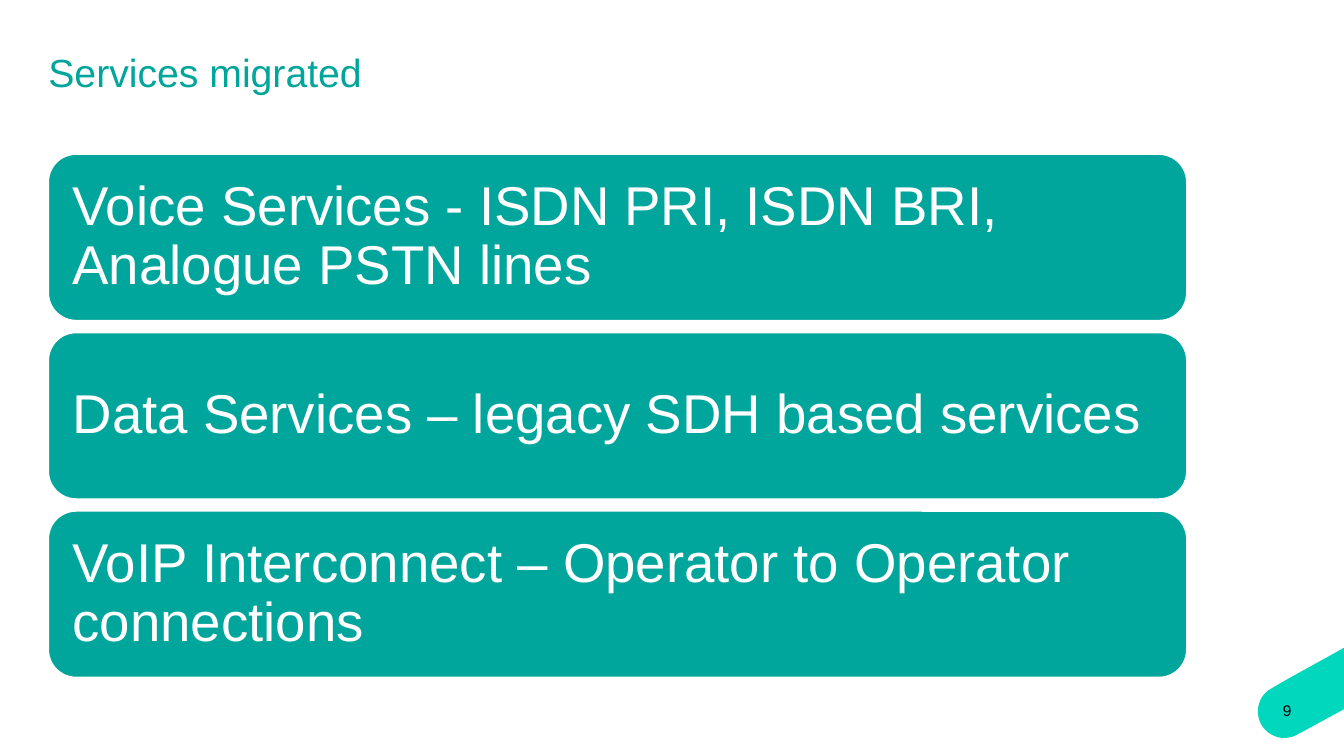
from dataclasses import dataclass

from pptx import Presentation
from pptx.dml.color import RGBColor
from pptx.enum.shapes import MSO_SHAPE
from pptx.enum.text import MSO_ANCHOR, PP_ALIGN
from pptx.util import Inches, Pt

ROUND_RECT = MSO_SHAPE.ROUNDED_RECTANGLE
TOP, MIDDLE = MSO_ANCHOR.TOP, MSO_ANCHOR.MIDDLE
LEFT, RIGHT = PP_ALIGN.LEFT, PP_ALIGN.RIGHT
TITLE_ONLY = 5
CURVE_STEPS = 12


@dataclass(frozen=True)
class Theme:
    font: str = "Arial"
    teal: RGBColor = RGBColor(0x00, 0xA5, 0x9B)
    mint: RGBColor = RGBColor(0x00, 0xD7, 0xBD)
    white: RGBColor = RGBColor(0xFF, 0xFF, 0xFF)
    black: RGBColor = RGBColor(0x00, 0x00, 0x00)
    title_size: Pt = Pt(28)
    card_size: Pt = Pt(39)
    number_size: Pt = Pt(11)


THEME = Theme()
MARGIN = 0.48
CARD_TOP, CARD_STEP = 1.53, 1.77
CARD_WIDTH, CARD_HEIGHT = 11.29, 1.65
SERVICES = [
    "Voice Services - ISDN PRI, ISDN BRI, Analogue PSTN lines",
    "Data Services – legacy SDH based services",
    "VoIP Interconnect – Operator to Operator connections",
]

# Each corner segment holds two control points and an end point, or an end point.
CORNER_START = (12.51, 7.19)
CORNER_SEGMENTS = [
    [(12.59, 7.32), (12.75, 7.36), (12.88, 7.28)],
    [(13.34, 7.03)],
    [(13.34, 6.42)],
    [(13.15, 6.53), (12.81, 6.71), (12.61, 6.83)],
    [(12.48, 6.90), (12.44, 7.06), CORNER_START],
]


def write_text(shape, text, size, color, anchor=TOP, align=LEFT, inset=0.0):
    """Fill a shape with one formatted paragraph and return that paragraph."""
    tf = shape.text_frame
    tf.word_wrap = True
    tf.vertical_anchor = anchor
    tf.margin_left = tf.margin_right = Inches(inset)
    tf.margin_top = tf.margin_bottom = Inches(inset)
    p = tf.paragraphs[0]
    p.alignment = align
    r = p.add_run()
    r.text = text
    r.font.name = THEME.font
    r.font.size = size
    r.font.color.rgb = color
    return p


def curve_points(start, first, second, end):
    """Return points along a cubic Bezier curve, without its start."""
    points = []
    for step in range(1, CURVE_STEPS + 1):
        t = step / CURVE_STEPS
        u = 1 - t
        points.append(tuple(
            u**3 * a + 3 * u**2 * t * b + 3 * u * t**2 * c + t**3 * d
            for a, b, c, d in zip(start, first, second, end)
        ))
    return points


def add_corner(s):
    points = [CORNER_START]
    for segment in CORNER_SEGMENTS:
        if len(segment) == 3:
            points += curve_points(points[-1], *segment)
        else:
            points += segment
    outline = [(Inches(x), Inches(y)) for x, y in points]
    builder = s.shapes.build_freeform(*outline[0])
    builder.add_line_segments(outline[1:], close=True)
    corner = builder.convert_to_shape()
    corner.shadow.inherit = False
    corner.fill.solid()
    corner.fill.fore_color.rgb = THEME.mint
    corner.line.fill.background()


def set_title(s, text):
    title = s.shapes.title
    title.left, title.top = Inches(MARGIN), Inches(MARGIN)
    title.width, title.height = Inches(12.36), Inches(1.02)
    write_text(title, text, THEME.title_size, THEME.teal)


def add_page_number(s, number):
    box = s.shapes.add_textbox(Inches(12.33), Inches(7), Inches(0.48), Inches(0.25))
    p = write_text(box, number, THEME.number_size, THEME.black, align=RIGHT)
    p.line_spacing = Pt(9.7)
    p.space_after = Pt(6)


def add_card(s, top, text):
    card = s.shapes.add_shape(
        ROUND_RECT, Inches(MARGIN), Inches(top), Inches(CARD_WIDTH), Inches(CARD_HEIGHT)
    )
    card.shadow.inherit = False
    card.fill.solid()
    card.fill.fore_color.rgb = THEME.teal
    card.line.color.rgb = THEME.white
    card.line.width = Pt(1)
    p = write_text(card, text, THEME.card_size, THEME.white, anchor=MIDDLE, inset=0.16)
    p.line_spacing = 0.9


def main():
    prs = Presentation()
    prs.slide_width, prs.slide_height = Inches(13.33), Inches(7.5)
    s = prs.slides.add_slide(prs.slide_layouts[TITLE_ONLY])
    add_corner(s)
    set_title(s, "Services migrated")
    add_page_number(s, "9")
    for i, service in enumerate(SERVICES):
        add_card(s, CARD_TOP + i * CARD_STEP, service)
    prs.save("out.pptx")


if __name__ == "__main__":
    main()
